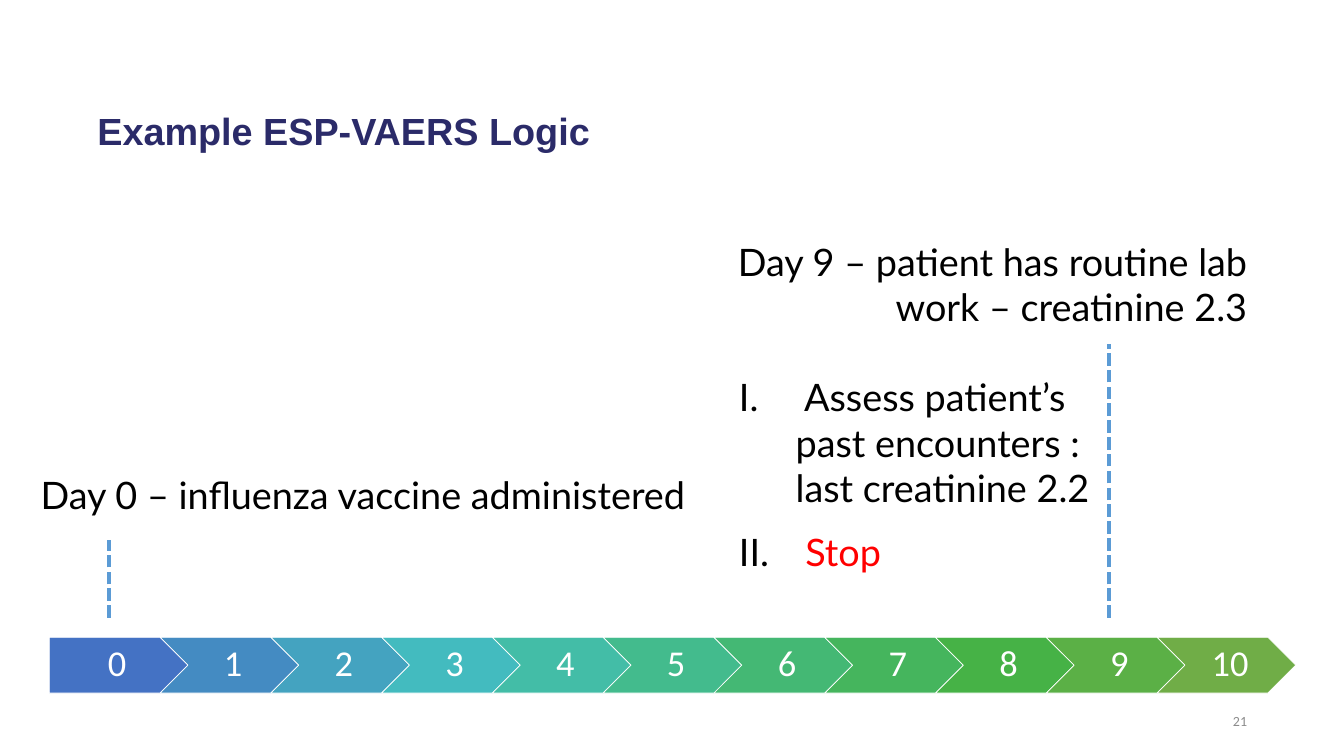
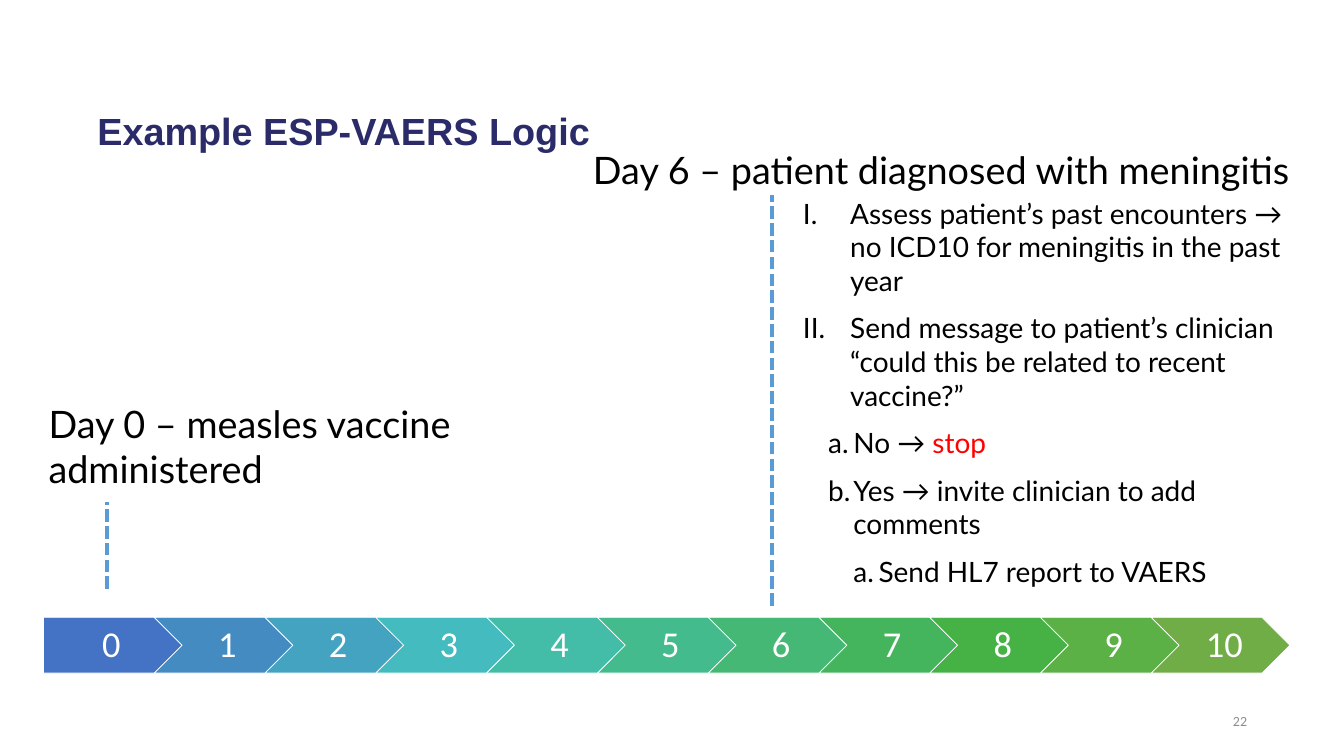
from lxml import etree
from pptx import Presentation
from pptx import util as u
from pptx.dml.color import RGBColor
from pptx.enum import dml, shapes, text
from pptx.oxml.ns import qn

px = 9525
rgb = RGBColor.from_string
BLACK, RED, WHITE, DASH_BLUE = "000000", "FF0000", "FFFFFF", "5B9BD5"
DAY_COLOURS = ["4472C4", "448BC2", "44A3C0", "43BBBF", "43BDA7", "43BB8D",
               "44B874", "45B55D", "46B246", "5BB046", "70AD47"]
DAY_WIDTH, DAY_HEIGHT, DAY_STEP = 264, 106, 211

HEADING = {"name": "Arial", "size": u.Pt(54), "bold": True}
EVENT = {"name": "Lato", "size": u.Pt(54)}
STEPS = {"name": "Lato", "size": u.Pt(40)}
DAY = {"name": "Calibri", "size": u.Pt(52)}
FOOTER = {"name": "Calibri", "size": u.Pt(20)}

LEFT, CENTER, RIGHT = text.PP_ALIGN.LEFT, text.PP_ALIGN.CENTER, text.PP_ALIGN.RIGHT
TOP, MIDDLE = text.MSO_ANCHOR.TOP, text.MSO_ANCHOR.MIDDLE


def write(holder, style, paragraphs, align=LEFT, anchor=TOP, spacing=1.0):
    frame = holder.text_frame
    frame.word_wrap = True
    frame.vertical_anchor = anchor
    for i, (runs, numbering) in enumerate(paragraphs):
        paragraph = frame.add_paragraph() if i else frame.paragraphs[0]
        paragraph.alignment = align
        paragraph.line_spacing = spacing
        if i:
            paragraph.space_before = style["size"] // 2
        if numbering:
            scheme, level, margin, hanging = numbering
            paragraph.level = level
            properties = paragraph._p.get_or_add_pPr()
            properties.set("marL", str(margin * px))
            properties.set("indent", str(-hanging * px))
            etree.SubElement(properties, qn("a:buAutoNum"), type=scheme)
        for words, colour in runs:
            if words == "\n":
                paragraph.add_line_break()
                continue
            run = paragraph.add_run()
            run.text = words
            run.font.color.rgb = rgb(colour)
            for name, value in style.items():
                setattr(run.font, name, value)


def add_text(slide, place, *args, **kwargs):
    write(slide.shapes.add_textbox(*(v * px for v in place)), *args, **kwargs)


LOGIC_STEP = ("romanUcPeriod", 0, 108, 108)
MAIN_STEP = ("romanUcPeriod", 0, 90, 90)
ANSWER = ("alphaLcPeriod", 1, 96, 48)
FOLLOW_UP = ("alphaLcPeriod", 2, 144, 48)

examples = [
    {
        "number": "21",
        "timeline": (94, 1214),
        "events": [
            ("Day 0 – influenza vaccine administered", (68, 894, 1330, 97), LEFT),
            ("Day 9 – patient has routine lab work – creatinine 2.3", (1353, 450, 1032, 184), RIGHT),
        ],
        "markers": [(208, 1177, 1029), (2112, 1177, 656)],
        "logic_place": (1398, 708, 714, 402),
        "logic_style": EVENT,
        "logic": [
            ([(" Assess patient’s past encounters : last creatinine 2.2", BLACK)], LOGIC_STEP),
            ([(" ", BLACK), ("Stop", RED)], LOGIC_STEP),
        ],
    },
    {
        "number": "22",
        "timeline": (83, 1176),
        "events": [
            ("Day 0 – measles vaccine administered", (83, 758, 1152, 143), LEFT),
            ("Day 6 – patient diagnosed with meningitis", (1120, 275, 1363, 97), LEFT),
        ],
        "markers": [(204, 1122, 957), (1470, 1154, 372)],
        "logic_place": (1520, 369, 989, 721),
        "logic_style": STEPS,
        "logic": [
            ([("Assess patient’s past encounters → no ICD10 for meningitis in the past year", BLACK)], MAIN_STEP),
            ([("Send message to patient’s clinician", BLACK), ("\n", BLACK),
              ("“could this be related to recent vaccine?”", BLACK)], MAIN_STEP),
            ([("No → ", BLACK), ("stop", RED)], ANSWER),
            ([("Yes → invite clinician to add comments", BLACK)], ANSWER),
            ([("Send HL7 report to VAERS", BLACK)], FOLLOW_UP),
        ],
    },
]

deck = Presentation()
deck.slide_width, deck.slide_height = 2560 * px, 1440 * px

for example in examples:
    slide = deck.slides.add_slide(deck.slide_layouts[6])
    add_text(slide, (176, 211, 2208, 156), HEADING,
             [([("Example ESP-VAERS Logic", "2B2B69")], None)], spacing=0.9)

    left, top = example["timeline"]
    for day, colour in enumerate(DAY_COLOURS):
        outline = shapes.MSO_SHAPE.CHEVRON if day else shapes.MSO_SHAPE.PENTAGON
        arrow = slide.shapes.add_shape(outline, (left + day * DAY_STEP) * px, top * px,
                                       DAY_WIDTH * px, DAY_HEIGHT * px)
        arrow.shadow.inherit = False
        arrow.fill.solid()
        arrow.fill.fore_color.rgb = rgb(colour)
        arrow.line.color.rgb = rgb(WHITE)
        arrow.line.width = u.Pt(1)
        insets = {"left": 22 if day else 29, "top": 14, "right": 8, "bottom": 14}
        for side, inset in insets.items():
            setattr(arrow.text_frame, f"margin_{side}", inset * px)
        write(arrow, DAY, [([(str(day), WHITE)], None)], CENTER, MIDDLE, 0.9)

    for words, place, align in example["events"]:
        add_text(slide, place, EVENT, [([(words, BLACK)], None)], align)

    for x, bottom, peak in example["markers"]:
        marker = slide.shapes.add_connector(shapes.MSO_CONNECTOR.STRAIGHT,
                                            x * px, bottom * px, x * px, peak * px)
        marker.line.color.rgb = rgb(DASH_BLUE)
        marker.line.width = u.Pt(6)
        marker.line.dash_style = dml.MSO_LINE.SQUARE_DOT
        etree.SubElement(marker._element.spPr, qn("a:effectLst"))

    add_text(slide, example["logic_place"], example["logic_style"], example["logic"])
    add_text(slide, (1809, 1334, 576, 77), FOOTER,
             [([(example["number"], "8C8C8C")], None)], RIGHT, MIDDLE)

deck.save("out.pptx")
